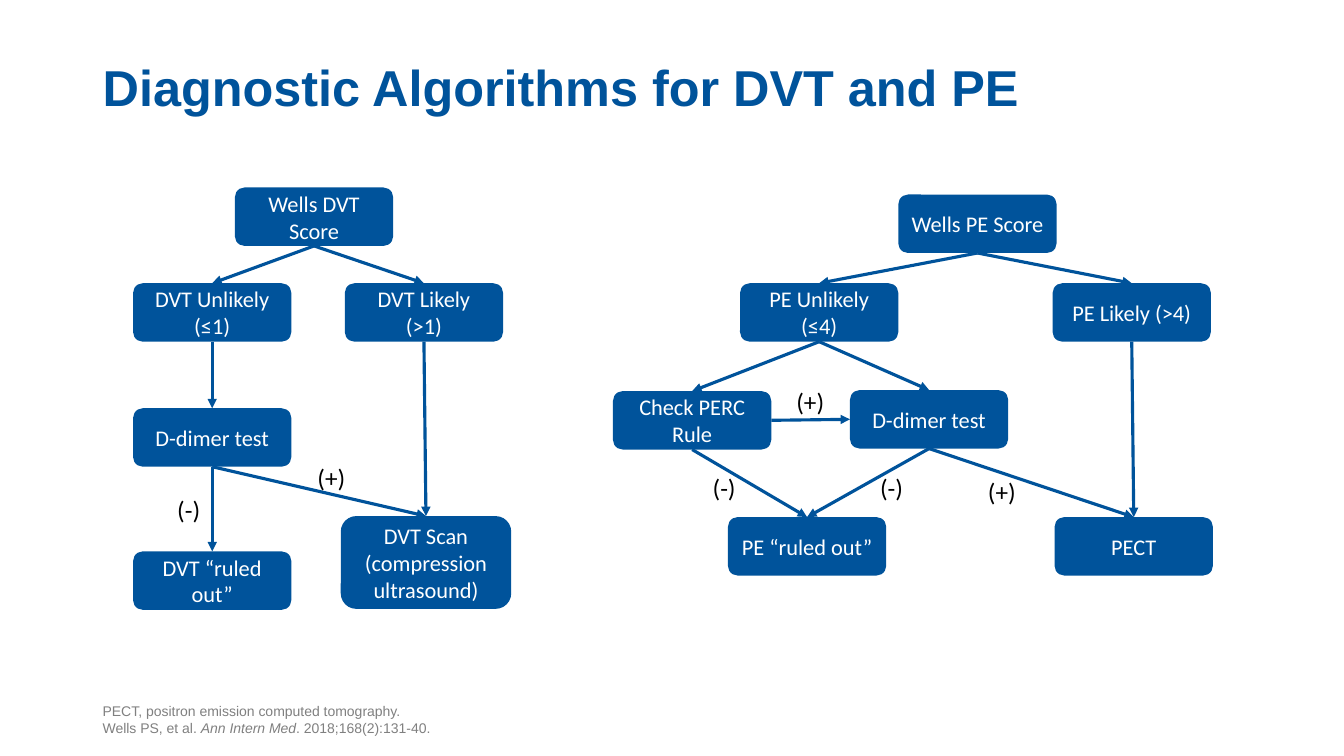
from lxml.etree import SubElement
from pptx import Presentation
from pptx.dml.color import RGBColor
from pptx.enum.shapes import MSO_CONNECTOR as Connector, MSO_SHAPE as Shape
from pptx.enum.text import MSO_ANCHOR as Anchor, MSO_AUTO_SIZE as AutoSize, PP_ALIGN as Align
from pptx.oxml.ns import qn
from pptx.util import Inches, Pt

TOP, LEFT, BOTTOM, RIGHT = range(4)
NODE_WIDTH, NODE_HEIGHT = 1.57, 0.58


def color(hex_code):
    return RGBColor.from_string(hex_code)


class Flowchart:
    """Style of the flowcharts and the slide they are drawn on."""
    blue, white, black, gray = "00539B", "FFFFFF", "000000", "808080"
    heading_font, body_font = "Arial", "Calibri"

    def __init__(self, slide):
        self.slide = slide

    def style(self, run, size, font, hex_code, bold=None, italic=None):
        run.font.size = Pt(size)
        run.font.name = font
        run.font.color.rgb = color(hex_code)
        run.font.bold = bold
        run.font.italic = italic

    def text_frame(self, left, top, width, height, anchor=Anchor.TOP, wrap=True):
        box = self.slide.shapes.add_textbox(*map(Inches, (left, top, width, height)))
        frame = box.text_frame
        frame.word_wrap = wrap
        frame.vertical_anchor = anchor
        return frame

    def title(self, text):
        frame = self.text_frame(0.92, 0, 11.5, 1.21, Anchor.BOTTOM)
        frame.text = text
        heading = frame.paragraphs[0]
        heading.line_spacing = 0.9
        self.style(heading.runs[0], 36, self.heading_font, self.blue, bold=True)

    def node(self, text, left, top, width=NODE_WIDTH, height=NODE_HEIGHT):
        node = self.slide.shapes.add_shape(
            Shape.ROUNDED_RECTANGLE, *map(Inches, (left, top, width, height)))
        node.shadow.inherit = False
        node.fill.solid()
        node.fill.fore_color.rgb = color(self.blue)
        node.line.fill.background()
        frame = node.text_frame
        frame.text = text
        frame.word_wrap = True
        frame.vertical_anchor = Anchor.MIDDLE
        frame.paragraphs[0].alignment = Align.CENTER
        self.style(frame.paragraphs[0].runs[0], 16, self.body_font, self.white)
        return node

    def arrow(self, source, target, source_side=BOTTOM, target_side=TOP):
        arrow = self.slide.shapes.add_connector(Connector.STRAIGHT, 0, 0, 0, 0)
        arrow.begin_connect(source, source_side)
        arrow.end_connect(target, target_side)
        arrow.line.color.rgb = color(self.blue)
        arrow.line.width = Pt(2.25)
        SubElement(arrow.line._get_or_add_ln(), qn("a:tailEnd"), type="triangle")
        SubElement(arrow._element.spPr, qn("a:effectLst"))

    def result(self, sign, left, top):
        """Label an arrow with a test result, (+) or (-)."""
        frame = self.text_frame(left, top, 0.48 if sign == "+" else 0.43, 0.4, wrap=False)
        frame.auto_size = AutoSize.SHAPE_TO_FIT_TEXT
        frame.text = f"({sign})"
        self.style(frame.paragraphs[0].runs[0], 18, self.body_font, self.black)

    def footnote(self, abbreviation, authors, journal, issue):
        note = self.text_frame(0.92, 6.95, 11.5, 0.4, Anchor.BOTTOM).paragraphs[0]
        note.text = abbreviation
        note.add_line_break()
        for part in (authors, journal, issue):
            note.add_run().text = part
        for run in note.runs:
            self.style(run, 10, self.heading_font, self.gray, italic=run.text == journal)


def draw_dvt(chart):
    score = chart.node("Wells DVT Score", 2.33, 1.86)
    unlikely = chart.node("DVT Unlikely (≤1)", 1.32, 2.81)
    d_dimer = chart.node("D-dimer test", 1.32, 4.05)
    ruled_out = chart.node("DVT “ruled out”", 1.32, 5.47)
    likely = chart.node("DVT Likely (>1)", 3.42, 2.81)
    scan = chart.node("DVT Scan (compression ultrasound)", 3.38, 5.12, 1.69, 0.92)
    for source, target in ((score, unlikely), (score, likely), (unlikely, d_dimer),
                           (likely, scan), (d_dimer, ruled_out), (d_dimer, scan)):
        chart.arrow(source, target)
    chart.result("+", 3.05, 4.54)
    chart.result("-", 1.66, 4.86)


def draw_pe(chart):
    score = chart.node("Wells PE Score", 8.91, 1.93)
    unlikely = chart.node("PE Unlikely (≤4)", 7.34, 2.81)
    likely = chart.node("PE Likely (>4)", 10.44, 2.81)
    perc = chart.node("Check PERC Rule", 6.08, 3.88)
    ruled_out = chart.node("PE “ruled out”", 7.22, 5.13)
    d_dimer = chart.node("D-dimer test", 8.43, 3.87)
    pect = chart.node("PECT", 10.46, 5.13)
    for source, target in ((score, unlikely), (score, likely), (unlikely, perc),
                           (unlikely, d_dimer), (perc, ruled_out), (d_dimer, ruled_out),
                           (d_dimer, pect), (likely, pect)):
        chart.arrow(source, target)
    chart.arrow(perc, d_dimer, RIGHT, LEFT)
    for sign, left, top in (("-", 6.97, 4.64), ("-", 8.63, 4.64),
                            ("+", 7.8, 3.78), ("+", 9.7, 4.68)):
        chart.result(sign, left, top)


def main():
    deck = Presentation()
    deck.slide_width, deck.slide_height = Inches(13.33), Inches(7.5)
    chart = Flowchart(deck.slides.add_slide(deck.slide_layouts[6]))
    chart.title("Diagnostic Algorithms for DVT and PE")
    draw_dvt(chart)
    draw_pe(chart)
    chart.footnote("PECT, positron emission computed tomography.",
                   "Wells PS, et al. ", "Ann Intern Med", ". 2018;168(2):131-40.")
    deck.save("out.pptx")


if __name__ == "__main__":
    main()
